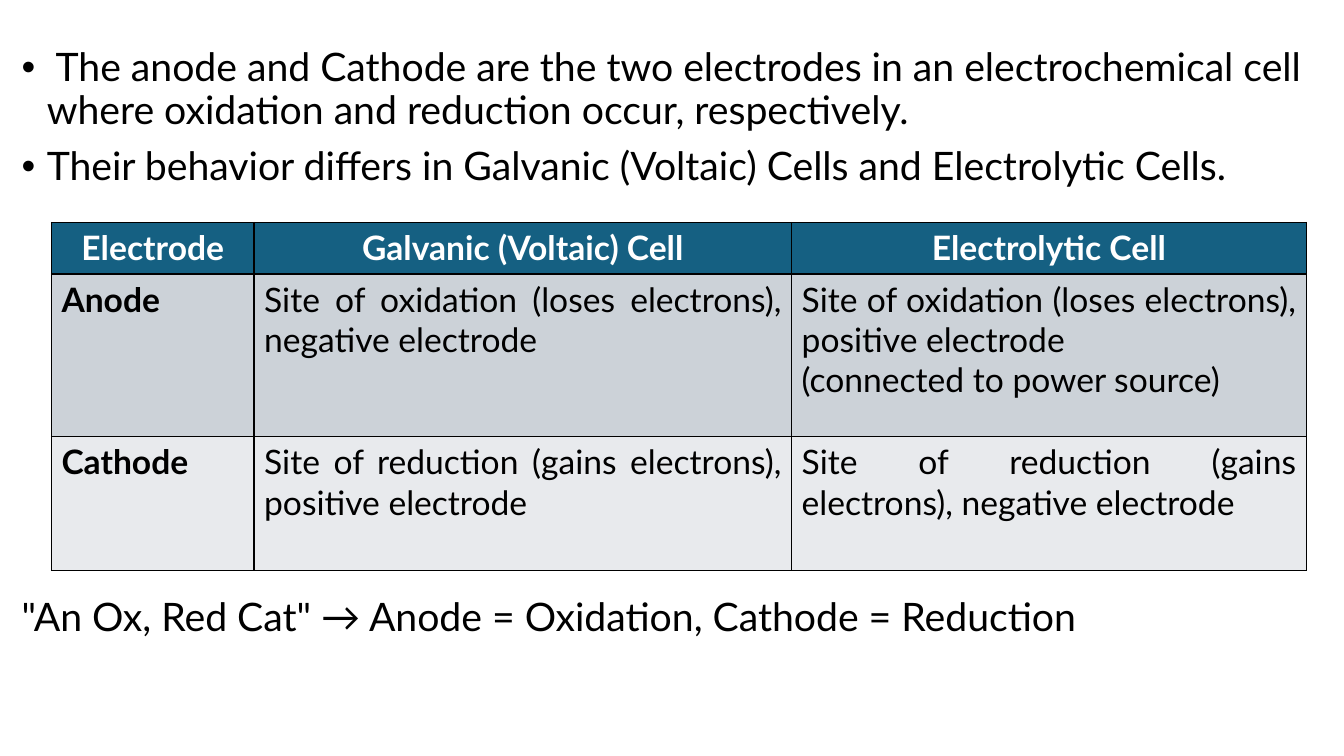
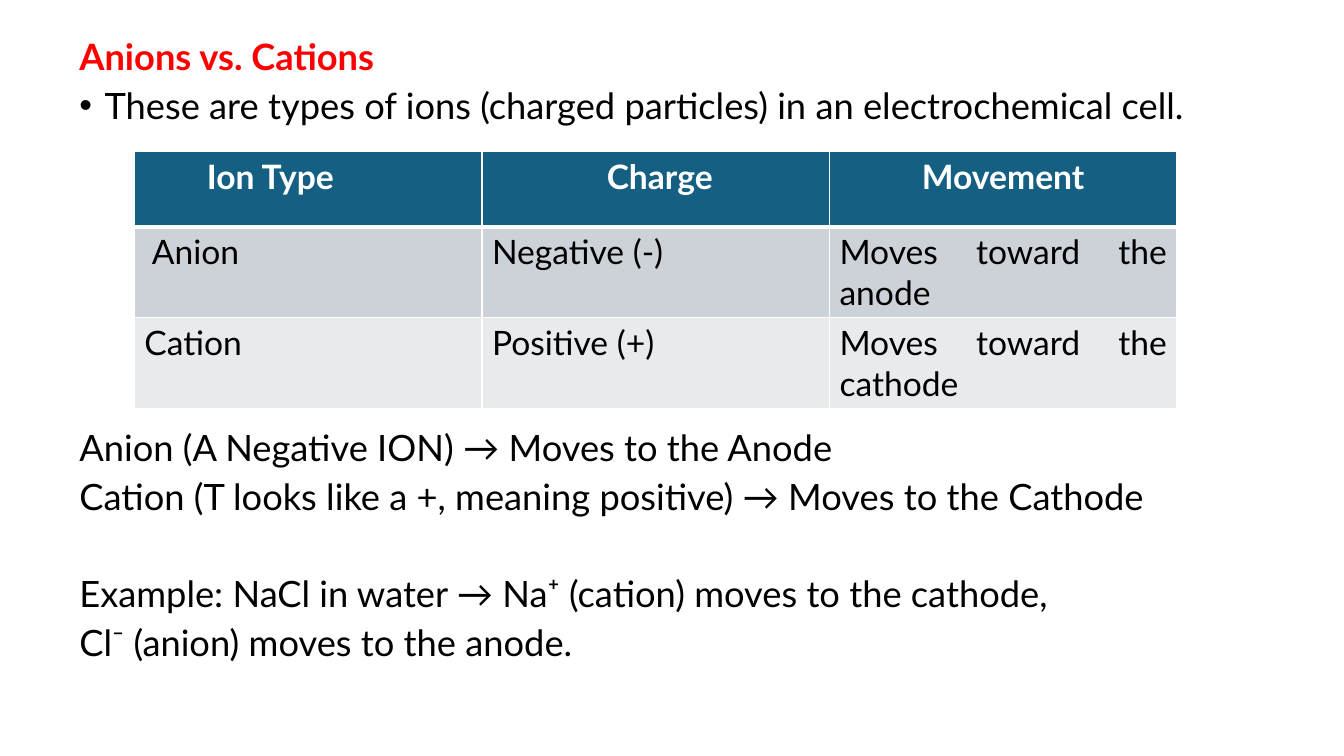
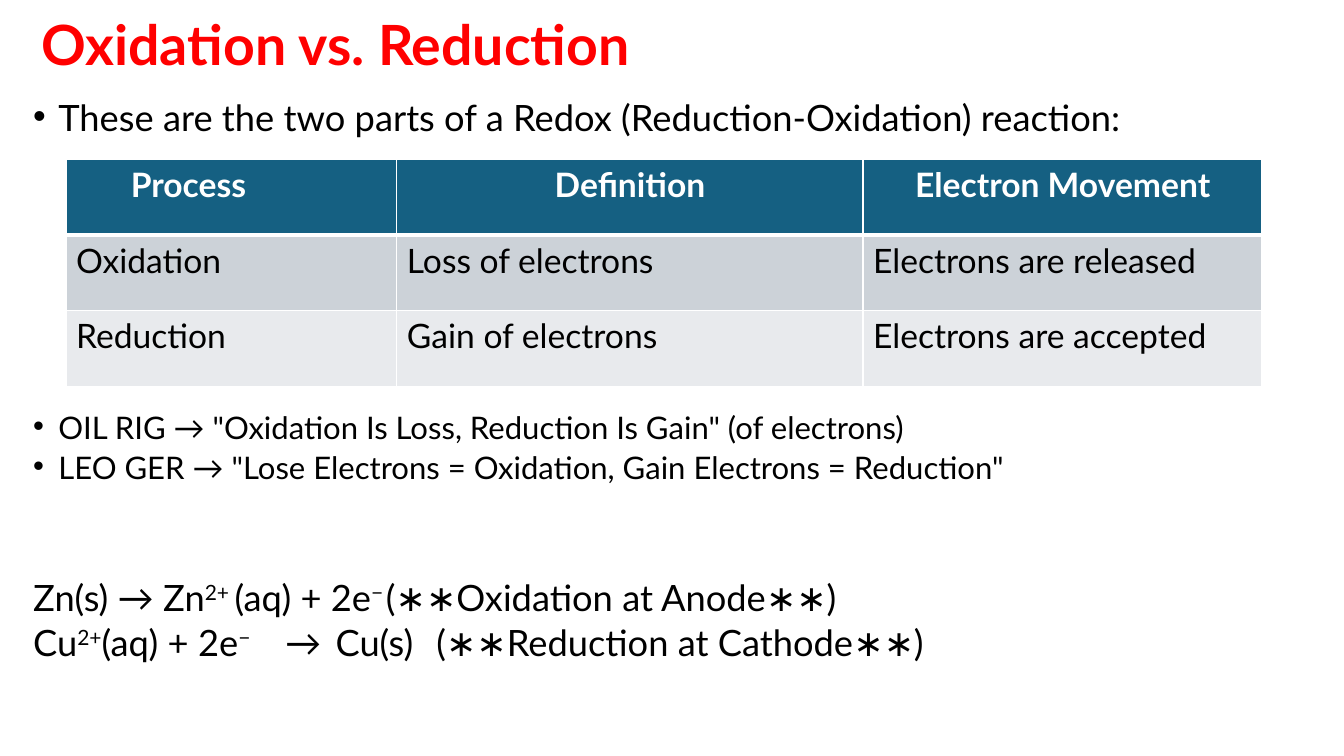
from dataclasses import dataclass
from typing import Any, NamedTuple

from lxml.etree import SubElement
from pptx import Presentation
from pptx.dml.color import RGBColor
from pptx.enum.text import MSO_ANCHOR, MSO_AUTO_SIZE, PP_ALIGN
from pptx.oxml.ns import qn
from pptx.util import Emu, Pt

EMU_PER_PX = 9525


@dataclass(frozen=True)
class Theme:
    font: str = "Lato"
    ink: str = "000000"
    white: str = "FFFFFF"
    heading: str = "FF0000"
    header_fill: str = "156082"
    row_fills: tuple[str, str] = ("CCD2D8", "E8EAED")
    title_size: float = 39.6
    lead_size: float = 28
    body_size: float = 25.9
    table_size: float = 24
    mnemonic_size: float = 22.2
    bullet_indent: int = 24
    title_spacing: float = 0.9


THEME = Theme()


class Box(NamedTuple):
    left: int
    top: int
    width: int
    height: int


@dataclass(frozen=True)
class Line:
    """One paragraph; text between carets is raised."""
    text: str
    bullet: bool = False
    before: float = 10
    size: float = THEME.body_size
    color: str = THEME.ink
    bold: bool = False
    align: PP_ALIGN = PP_ALIGN.LEFT
    tabs: tuple[int, ...] = ()


@dataclass(frozen=True)
class Grid:
    left: int
    top: int
    columns: tuple[int, ...]
    heights: tuple[int, ...]
    rows: tuple[tuple[str, ...], ...]
    border: str = THEME.white
    header_rule: float = 3
    bold_labels: bool = False
    header_inset: int = 0


@dataclass(frozen=True)
class Topic:
    body: Box
    spacing: float
    lines: tuple[Line, ...]
    grid: Grid
    title: str = ""


TITLE_BOX = Box(30, 17, 1175, 57)

TOPICS = (
    Topic(
        Box(11, 41, 1259, 623), 0.9,
        (
            Line(" The anode and Cathode are the two electrodes in an electrochemical cell "
                 "where oxidation and reduction occur, respectively.",
                 bullet=True, size=THEME.lead_size),
            Line("Their behavior differs in Galvanic (Voltaic) Cells and Electrolytic Cells.",
                 bullet=True, size=THEME.lead_size),
            Line('"An Ox, Red Cat" → Anode = Oxidation, Cathode = Reduction',
                 before=291.7, size=THEME.lead_size),
        ),
        Grid(49, 212, (193, 512, 490), (49, 155, 127), (
            ("Electrode", "Galvanic (Voltaic) Cell", "Electrolytic Cell"),
            ("Anode", "Site of oxidation (loses electrons), negative electrode",
             "Site of oxidation (loses electrons), positive electrode\n"
             "(connected to power source)"),
            ("Cathode", "Site of reduction (gains electrons), positive electrode",
             "Site of reduction (gains electrons), negative electrode"),
        ), border=THEME.ink, header_rule=1, bold_labels=True),
    ),
    Topic(
        Box(66, 36, 1201, 612), 0.8,
        (
            Line("Anions vs. Cations", color=THEME.heading, bold=True),
            Line("These are types of ions (charged particles) in an electrochemical cell.",
                 bullet=True),
            Line("Anion (A Negative ION) → Moves to the Anode",
                 before=219.2, align=PP_ALIGN.JUSTIFY),
            Line("Cation (T looks like a +, meaning positive) → Moves to the Cathode",
                 align=PP_ALIGN.JUSTIFY),
            Line("Example: NaCl in water → Na⁺ (cation) moves to the cathode,",
                 before=44.9, align=PP_ALIGN.JUSTIFY),
            Line("Cl⁻ (anion) moves to the anode.", align=PP_ALIGN.JUSTIFY),
        ),
        Grid(128, 144, (331,) * 3, (72, 86, 86), (
            ("Ion Type", " Charge", "Movement"),
            (" Anion", "Negative (-)", "Moves toward the anode"),
            ("Cation", "Positive (+)", "Moves toward the cathode"),
        ), header_inset=72),
    ),
    Topic(
        Box(22, 97, 1223, 591), 0.7,
        (
            Line("These are the two parts of a Redox (Reduction-Oxidation) reaction:",
                 bullet=True),
            Line('OIL RIG → "Oxidation Is Loss, Reduction Is Gain" (of electrons)',
                 bullet=True, before=200.6, size=THEME.mnemonic_size),
            Line('LEO GER → "Lose Electrons = Oxidation, Gain Electrons = Reduction"',
                 bullet=True, size=THEME.mnemonic_size),
            Line("Zn(s) → Zn^2+ ^(aq) + 2e^−^\t(∗∗Oxidation at Anode∗∗)",
                 before=73.5, tabs=(424,)),
            Line("Cu^2+^(aq) + 2e^−^\t→\tCu(s)\t(∗∗Reduction at Cathode∗∗)",
                 tabs=(233, 293, 429)),
        ),
        Grid(63, 152, (315, 444, 380), (72,) * 3, (
            ("Process", "Definition", "Electron Movement"),
            ("Oxidation", "Loss of electrons", "Electrons are released"),
            ("Reduction", "Gain of electrons", "Electrons are accepted"),
        ), header_inset=82),
        title="Oxidation vs. Reduction",
    ),
)


def px(length: int) -> Emu:
    return Emu(length * EMU_PER_PX)


def assign(target: Any, values: dict[str, Any]) -> None:
    for name, value in values.items():
        setattr(target, name, value)


def place(shape: Any, box: Box) -> None:
    assign(shape, {side: px(length) for side, length in box._asdict().items()})


def write(paragraph: Any, line: Line) -> None:
    """Add the runs of a line, raising every second piece between carets."""
    paragraph.alignment = line.align
    for index, piece in enumerate(line.text.split("^")):
        run = paragraph.add_run()
        run.text = piece
        assign(run.font, {"name": THEME.font, "size": Pt(line.size), "bold": line.bold})
        run.font.color.rgb = RGBColor.from_string(line.color)
        if index % 2:
            run.font._element.set("baseline", "30000")


def set_indent(paragraph: Any, line: Line) -> None:
    properties = paragraph._p.get_or_add_pPr()
    indent = px(THEME.bullet_indent) if line.bullet else 0
    properties.set("marL", str(indent))
    properties.set("indent", str(-indent))
    if line.bullet:
        SubElement(properties, qn("a:buFont"), typeface="Arial")
        SubElement(properties, qn("a:buChar"), char="•")
    else:
        SubElement(properties, qn("a:buNone"))
    if line.tabs:
        stops = SubElement(properties, qn("a:tabLst"))
        for stop in line.tabs:
            SubElement(stops, qn("a:tab"), pos=str(px(stop)), algn="l")


def fill_placeholder(shape: Any, box: Box, lines: tuple[Line, ...], spacing: float,
                     anchor: MSO_ANCHOR) -> None:
    place(shape, box)
    frame = shape.text_frame
    assign(frame, {"word_wrap": True, "auto_size": MSO_AUTO_SIZE.NONE,
                   "vertical_anchor": anchor})
    for index, line in enumerate(lines):
        paragraph = frame.add_paragraph() if index else frame.paragraphs[0]
        assign(paragraph, {"line_spacing": spacing, "space_before": Pt(line.before)})
        set_indent(paragraph, line)
        write(paragraph, line)


def set_borders(cell: Any, color: str, top: float, bottom: float) -> None:
    properties = cell._tc.get_or_add_tcPr()
    for side, weight in {"lnL": 1, "lnR": 1, "lnT": top, "lnB": bottom}.items():
        edge = SubElement(properties, qn(f"a:{side}"), w=str(Pt(weight)))
        SubElement(SubElement(edge, qn("a:solidFill")), qn("a:srgbClr"), val=color)


def add_grid(slide: Any, grid: Grid) -> None:
    box = Box(grid.left, grid.top, sum(grid.columns), sum(grid.heights))
    table = slide.shapes.add_table(len(grid.rows), len(grid.columns), *map(px, box)).table
    table.horz_banding = False
    for column, width in zip(table.columns, grid.columns):
        column.width = px(width)
    for r, (row, height, texts) in enumerate(zip(table.rows, grid.heights, grid.rows)):
        row.height = px(height)
        header = r == 0
        fill = THEME.header_fill if header else THEME.row_fills[(r - 1) % 2]
        for c, (cell, text) in enumerate(zip(row.cells, texts)):
            set_borders(cell, grid.border, grid.header_rule if r == 1 else 1,
                        grid.header_rule if header else 1)
            cell.fill.solid()
            cell.fill.fore_color.rgb = RGBColor.from_string(fill)
            if header and c == 0 and grid.header_inset:
                cell.margin_right += px(grid.header_inset)
            for index, part in enumerate(text.split("\n")):
                frame = cell.text_frame
                paragraph = frame.add_paragraph() if index else frame.paragraphs[0]
                write(paragraph, Line(
                    part, size=THEME.table_size,
                    color=THEME.white if header else THEME.ink,
                    bold=header or (grid.bold_labels and c == 0),
                    align=PP_ALIGN.CENTER if header else PP_ALIGN.JUSTIFY))


def add_topic(deck: Any, topic: Topic) -> None:
    slide = deck.slides.add_slide(deck.slide_layouts[1])
    title, body = slide.placeholders
    if topic.title:
        heading = Line(topic.title, before=0, size=THEME.title_size,
                       color=THEME.heading, bold=True)
        fill_placeholder(title, TITLE_BOX, (heading,), THEME.title_spacing,
                         MSO_ANCHOR.MIDDLE)
    else:
        title._element.getparent().remove(title._element)
    fill_placeholder(body, topic.body, topic.lines, topic.spacing, MSO_ANCHOR.TOP)
    add_grid(slide, topic.grid)


def main() -> None:
    deck = Presentation()
    assign(deck, {"slide_width": px(1280), "slide_height": px(720)})
    for topic in TOPICS:
        add_topic(deck, topic)
    deck.save("out.pptx")


if __name__ == "__main__":
    main()
